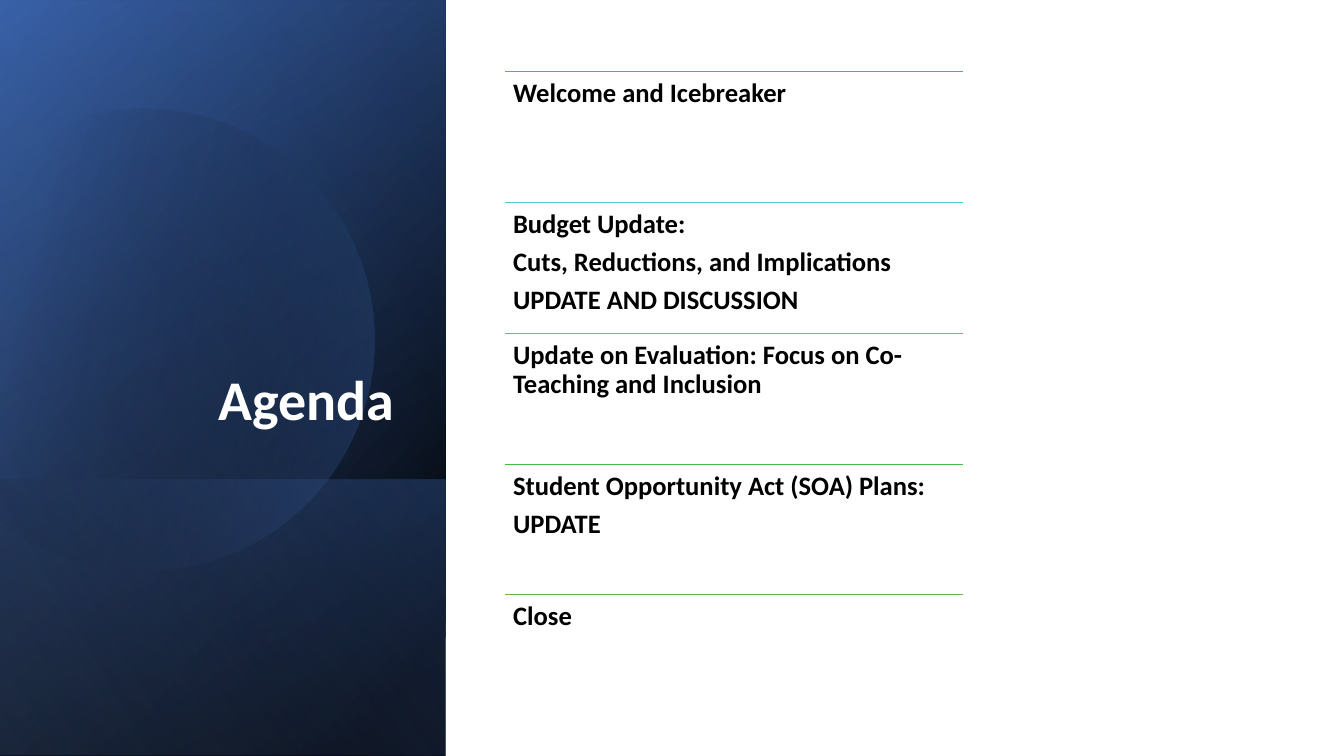
from dataclasses import dataclass
from itertools import pairwise
from math import ceil, cos, radians, sin, tan

from lxml.etree import SubElement
from pptx import Presentation
from pptx.dml.color import RGBColor
from pptx.enum.shapes import MSO_CONNECTOR, MSO_SHAPE
from pptx.enum.text import MSO_ANCHOR as Anchor, PP_ALIGN as Align
from pptx.oxml.ns import qn
from pptx.util import Pt

PX = 9144  # EMU per px, 100 px to the inch

BLACK = RGBColor(0x00, 0x00, 0x00)
WHITE = RGBColor(0xFF, 0xFF, 0xFF)
NAVY = RGBColor(0x2F, 0x55, 0x97)
BLUE = RGBColor(0x44, 0x72, 0xC4)
PALE_BLUE = RGBColor(0x8F, 0xAA, 0xDC)
SKY = RGBColor(0x5B, 0x9B, 0xD5)
TEAL = RGBColor(0x54, 0xCC, 0xCD)
SEA_GREEN = RGBColor(0x4D, 0xC5, 0x8D)
GREEN = RGBColor(0x48, 0xBB, 0x4F)
OLIVE = RGBColor(0x70, 0xAD, 0x47)


@dataclass
class Stop:
    position: int
    color: RGBColor
    opacity: int = 100


@dataclass
class Gradient:
    start: Stop
    end: Stop
    angle: int


@dataclass
class Panel:
    left: int
    top: int
    width: int
    height: int
    gradient: Gradient


@dataclass
class AgendaItem:
    color: RGBColor
    lines: list[str]


BASE_PANELS = [
    Panel(-154, 154, 750, 442, Gradient(Stop(8, BLACK), Stop(100, NAVY), 50)),
    Panel(-154, 155, 750, 442, Gradient(Stop(0, BLACK, 0), Stop(99, BLUE, 46), 30)),
    Panel(84, 392, 274, 442, Gradient(Stop(2, BLUE, 29), Stop(100, BLACK, 30), 130)),
]
DISC_GRADIENT = Gradient(Stop(29, BLACK, 0), Stop(100, BLUE, 43), 30)
TOP_PANEL = Panel(-154, 153, 750, 442,
                  Gradient(Stop(0, BLACK, 0), Stop(99, PALE_BLUE, 11), 120))

AGENDA = [
    AgendaItem(SKY, ["Welcome and Icebreaker"]),
    AgendaItem(TEAL, ["Budget Update:", "Cuts, Reductions, and Implications",
                      "UPDATE AND DISCUSSION"]),
    AgendaItem(SEA_GREEN, ["Update on Evaluation: Focus on Co-Teaching and Inclusion"]),
    AgendaItem(GREEN, ["Student Opportunity Act (SOA) Plans:", "UPDATE"]),
    AgendaItem(OLIVE, ["Close"]),
]
AGENDA_LEFT, AGENDA_WIDTH, ROW_HEIGHT = 501, 454, 130
FIRST_RULE, LAST_RULE = 71, 590


def paint(sp, gradient: Gradient) -> None:
    """Fill a shape with a two-stop gradient and drop its outline and shadow."""
    sp.shadow.inherit = False
    sp.line.fill.background()
    sp.fill.gradient()
    sp.fill.gradient_angle = 360 - gradient.angle
    stops = (gradient.start, gradient.end)
    for target, stop in zip(sp.fill.gradient_stops, stops):
        target.position = stop.position / 100
        target.color.rgb = stop.color
    for color, stop in zip(sp.element.spPr.iter(qn("a:srgbClr")), stops):
        if stop.opacity < 100:
            SubElement(color, qn("a:alpha")).set("val", str(stop.opacity * 1000))


def add_panel(shapes, panel: Panel) -> None:
    """Draw a rectangle mirrored and turned on its side."""
    box = (panel.left, panel.top, panel.width, panel.height)
    sp = shapes.add_shape(MSO_SHAPE.RECTANGLE, *(v * PX for v in box))
    sp.rotation = 90
    sp.element.spPr.xfrm.set("flipH", "1")
    paint(sp, panel.gradient)


def add_disc(shapes, x: int, y: int, radius: int, tilt: float, gradient: Gradient) -> None:
    """Draw a tilted disc cut off by the left edge of the slide."""
    def point(angle: float, slide_along: float = 0) -> tuple[float, float]:
        """Give the point at an angle, moved along its tangent."""
        a = radians(angle)
        return ((x + radius * (cos(a) - slide_along * sin(a))) * PX,
                (y + radius * (sin(a) + slide_along * cos(a))) * PX)

    corners = [226 - tilt, -90, 0, 90, 494 - tilt]
    points = []
    for a, b in pairwise(corners):
        handle = 4 / 3 * tan(radians(b - a) / 4)
        points += [point(a, handle), point(b, -handle), point(b)]
    builder = shapes.build_freeform(*point(corners[0]))
    builder.add_line_segments(points, close=True)
    sp = builder.convert_to_shape()
    # Each run of three points becomes one Bézier arc.
    segments = list(sp.element.spPr.iter(qn("a:lnTo")))
    for i in range(0, len(points), 3):
        first, second, end = segments[i:i + 3]
        first.tag = qn("a:cubicBezTo")
        for segment in (second, end):
            first.append(segment[0])
            segment.getparent().remove(segment)
    sp.rotation = tilt
    paint(sp, gradient)


def add_text(shapes, lines: list[str], left: int, top: int, width: int, height: int, *,
             size: int, color: RGBColor, align: Align = Align.LEFT,
             anchor: Anchor = Anchor.TOP, inset: tuple[int, int] = (8, 8),
             space_after: float = 0) -> None:
    box = shapes.add_textbox(left * PX, top * PX, width * PX, height * PX)
    tf = box.text_frame
    tf.word_wrap = True
    tf.vertical_anchor = anchor
    tf.margin_left = tf.margin_right = inset[0] * PX
    tf.margin_top = tf.margin_bottom = inset[1] * PX
    for i, line in enumerate(lines):
        p = tf.add_paragraph() if i else tf.paragraphs[0]
        p.alignment = align
        p.line_spacing = 0.9
        p.space_after = Pt(space_after)
        r = p.add_run()
        r.text = line
        r.font.name = "Calibri"
        r.font.size = Pt(size)
        r.font.bold = True
        r.font.color.rgb = color


def add_rule(shapes, left: int, top: int, width: int, color: RGBColor) -> None:
    rule = shapes.add_connector(MSO_CONNECTOR.STRAIGHT, left * PX, top * PX,
                                (left + width) * PX, top * PX)
    rule.line.color.rgb = color
    rule.line.width = Pt(0.5)
    SubElement(rule.element.spPr, qn("a:effectLst"))


def main() -> None:
    prs = Presentation()
    prs.slide_width, prs.slide_height = 1333 * PX, 750 * PX
    shapes = prs.slides.add_slide(prs.slide_layouts[6]).shapes

    for panel in BASE_PANELS:
        add_panel(shapes, panel)
    add_disc(shapes, 142, 333, 229, 343.9, DISC_GRADIENT)
    add_panel(shapes, TOP_PANEL)
    add_text(shapes, ["Agenda"], 51, 64, 350, 370, size=40, color=WHITE,
             align=Align.RIGHT, anchor=Anchor.BOTTOM, inset=(10, 5))

    agenda = shapes.add_group_shape().shapes
    pitch = (LAST_RULE - FIRST_RULE) / (len(AGENDA) - 1)
    for row, item in enumerate(AGENDA):
        top = FIRST_RULE + ceil(row * pitch)
        add_rule(agenda, AGENDA_LEFT, top, AGENDA_WIDTH, item.color)
        add_text(agenda, item.lines, AGENDA_LEFT, top, AGENDA_WIDTH, ROW_HEIGHT,
                 size=19, color=BLACK, space_after=6.5)

    prs.save("out.pptx")


if __name__ == "__main__":
    main()
